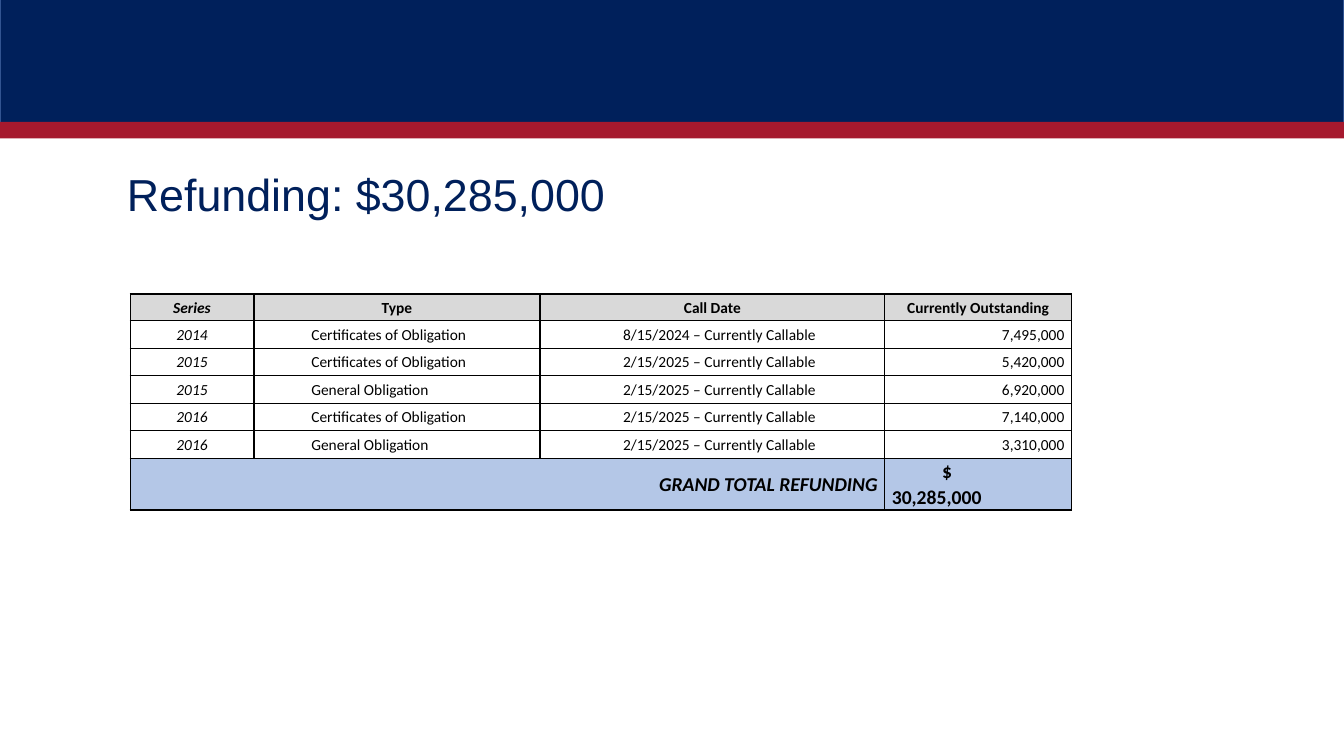
from dataclasses import dataclass

from lxml import etree
from pptx import Presentation
from pptx.dml.color import RGBColor
from pptx.enum import shapes, text
from pptx.oxml import ns
from pptx.util import Pt

COLORS = {
    "navy": "00205B",
    "navy_edge": "325491",
    "red": "A6192E",
    "black": "000000",
    "white": "FFFFFF",
    "header": "D9D9D9",
    "total": "B4C7E7",
}
LEFT, CENTER, RIGHT = text.PP_ALIGN.LEFT, text.PP_ALIGN.CENTER, text.PP_ALIGN.RIGHT


@dataclass(frozen=True)
class Band:
    top: float
    height: float
    fill: str
    edge: str | None = None


@dataclass(frozen=True)
class CellStyle:
    align: text.PP_ALIGN = CENTER
    bold: bool = False
    italic: bool = False
    size: float = 11
    fill: str = "white"
    margin: float = 0
    indent: float = 0
    tabs: tuple[tuple[float, str], ...] = ()


SLIDE_WIDTH, SLIDE_HEIGHT = 960, 540
BANDS = [
    Band(-0.72, 88.6, "navy", "navy_edge"),
    Band(87.1, 11.7, "red"),
]
COLUMN_WIDTHS = [88.4, 204.4, 246.3, 133.3]
ROW_HEIGHTS = [13.5, 19] + [19.7] * 5 + [37]
TABLE_LEFT, TABLE_TOP = 93, 196.5

HEADINGS = ["Series", "Type", "Call Date", "Currently Outstanding"]
BONDS = [
    ("2014", "Certificates of Obligation", "8/15/2024 – Currently Callable", "7,495,000"),
    ("2015", "Certificates of Obligation", "2/15/2025 – Currently Callable", "5,420,000"),
    ("2015", "General Obligation", "2/15/2025 – Currently Callable", "6,920,000"),
    ("2016", "Certificates of Obligation", "2/15/2025 – Currently Callable", "7,140,000"),
    ("2016", "General Obligation", "2/15/2025 – Currently Callable", "3,310,000"),
]
HEADING_STYLES = [CellStyle(bold=True, italic=i == 0, fill="header") for i in range(4)]
BOND_STYLES = [
    CellStyle(italic=True),
    CellStyle(LEFT, margin=36),
    CellStyle(indent=10),
    CellStyle(RIGHT, indent=10),
]
TOTAL_LABEL = CellStyle(RIGHT, bold=True, italic=True, size=14, fill="total")
TOTAL_AMOUNT = CellStyle(LEFT, bold=True, size=14, fill="total",
                         tabs=((29.6, "l"), (122.5, "r")))


def rgb(name: str) -> RGBColor:
    return RGBColor.from_string(COLORS[name])


def add_band(slide, band: Band) -> None:
    bar = slide.shapes.add_shape(shapes.MSO_SHAPE.RECTANGLE, Pt(0), Pt(band.top),
                                 Pt(SLIDE_WIDTH), Pt(band.height))
    bar.shadow.inherit = False
    bar.fill.solid()
    bar.fill.fore_color.rgb = rgb(band.fill)
    if band.edge:
        bar.line.color.rgb = rgb(band.edge)
        bar.line.width = Pt(1)
    else:
        bar.line.fill.background()


def add_title(slide, title: str) -> None:
    box = slide.shapes.add_textbox(Pt(83.5), Pt(115.2), Pt(358.6), Pt(46))
    frame = box.text_frame
    frame.word_wrap = False
    frame.auto_size = text.MSO_AUTO_SIZE.SHAPE_TO_FIT_TEXT
    run = frame.paragraphs[0].add_run()
    run.text = title
    run.font.name, run.font.size = "Arial", Pt(32)
    run.font.color.rgb = rgb("navy")


def dress_cell(cell, fill: str, black_sides: str = "LRTB") -> None:
    """Set insets, borders and fill; sides not listed get no line."""
    insets = {"margin_left": 5, "margin_right": 5, "margin_top": 0, "margin_bottom": 0}
    for name, value in insets.items():
        setattr(cell, name, Pt(value))
    cell.vertical_anchor = text.MSO_ANCHOR.MIDDLE
    properties = cell._tc.get_or_add_tcPr()
    for side in "LRTB":
        line = etree.SubElement(properties, ns.qn(f"a:ln{side}"), w=str(Pt(1)))
        if side in black_sides:
            solid = etree.SubElement(line, ns.qn("a:solidFill"))
            etree.SubElement(solid, ns.qn("a:srgbClr"), val=COLORS["black"])
        else:
            etree.SubElement(line, ns.qn("a:noFill"))
    cell.fill.solid()
    cell.fill.fore_color.rgb = rgb(fill)


def write_cell(cell, words: str, style: CellStyle) -> None:
    paragraph = cell.text_frame.paragraphs[0]
    paragraph.alignment = style.align
    paragraph.line_spacing = 1.07
    properties = paragraph._p.get_or_add_pPr()
    properties.set("marL", str(Pt(style.margin)))
    properties.set("indent", str(Pt(style.indent)))
    if style.tabs:
        stops = etree.SubElement(properties, ns.qn("a:tabLst"))
        for position, kind in style.tabs:
            etree.SubElement(stops, ns.qn("a:tab"), pos=str(Pt(position)), algn=kind)
    run = paragraph.add_run()
    run.text = words
    font_values = {"name": "Calibri", "size": Pt(style.size),
                   "bold": style.bold, "italic": style.italic}
    for name, value in font_values.items():
        setattr(run.font, name, value)
    run.font.color.rgb = rgb("black")


def add_refunding_table(slide) -> None:
    table = slide.shapes.add_table(
        len(ROW_HEIGHTS), len(COLUMN_WIDTHS), Pt(TABLE_LEFT), Pt(TABLE_TOP),
        Pt(sum(COLUMN_WIDTHS)), Pt(sum(ROW_HEIGHTS))).table
    table.first_row = table.horz_banding = False
    for column, width in zip(table.columns, COLUMN_WIDTHS):
        column.width = Pt(width)
    for row, height in zip(table.rows, ROW_HEIGHTS):
        row.height = Pt(height)

    spacer, total = 0, len(ROW_HEIGHTS) - 1
    table.cell(spacer, 0).merge(table.cell(spacer, 3))
    table.cell(total, 0).merge(table.cell(total, 2))

    for cell in table.rows[spacer].cells:
        dress_cell(cell, "white", "B")
        etree.SubElement(cell.text_frame.paragraphs[0]._p, ns.qn("a:endParaRPr"), sz="800")

    lines = [(HEADINGS, HEADING_STYLES)] + [(bond, BOND_STYLES) for bond in BONDS]
    for row, (words, styles) in enumerate(lines, start=1):
        for column, (word, style) in enumerate(zip(words, styles)):
            cell = table.cell(row, column)
            dress_cell(cell, style.fill)
            write_cell(cell, word, style)

    for cell in table.rows[total].cells:
        dress_cell(cell, "total")
    write_cell(table.cell(total, 0), "GRAND TOTAL REFUNDING", TOTAL_LABEL)
    write_cell(table.cell(total, 3), "\t$\t30,285,000", TOTAL_AMOUNT)


def main() -> None:
    deck = Presentation()
    deck.slide_width, deck.slide_height = Pt(SLIDE_WIDTH), Pt(SLIDE_HEIGHT)
    slide = deck.slides.add_slide(deck.slide_layouts[6])
    for band in BANDS:
        add_band(slide, band)
    add_refunding_table(slide)
    add_title(slide, "Refunding: $30,285,000")
    deck.save("out.pptx")


if __name__ == "__main__":
    main()
